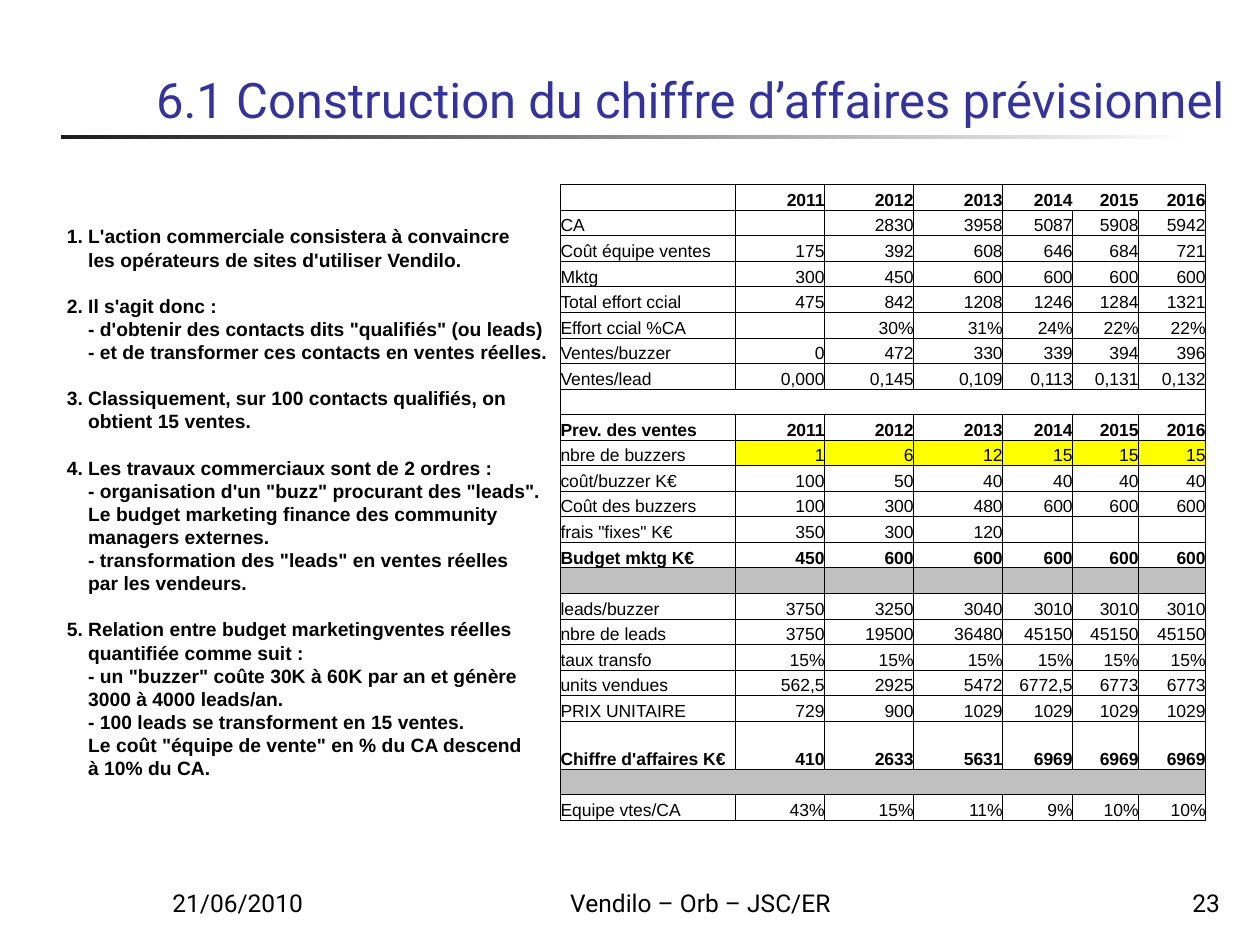
"""Build the sales forecast slide: numbered reasoning beside the revenue table."""
from lxml.etree import SubElement
from pptx import Presentation
from pptx.dml.color import RGBColor as Rgb
from pptx.enum.shapes import MSO_SHAPE as Preset
from pptx.enum.text import MSO_ANCHOR as Anchor, MSO_AUTO_SIZE as AutoSize, PP_ALIGN as Align
from pptx.oxml.ns import qn
from pptx.util import Pt

TITLE = "6.1 Construction du chiffre d’affaires prévisionnel"
POINTS = [
    ("L'action commerciale consistera à convaincre\vles opérateurs de sites d'utiliser Vendilo.",),
    ("Il s'agit donc :",
     "- d'obtenir des contacts dits \"qualifiés\" (ou leads)",
     "- et de transformer ces contacts en ventes réelles."),
    ("Classiquement, sur 100 contacts qualifiés, on\vobtient 15 ventes.",),
    ("Les travaux commerciaux sont de 2 ordres :",
     "- organisation d'un \"buzz\" procurant des \"leads\".\v"
     "Le budget marketing finance des community\vmanagers externes.",
     "- transformation des \"leads\" en ventes réelles\vpar les vendeurs."),
    ("Relation entre budget marketingventes réelles\vquantifiée comme suit :",
     "- un \"buzzer\" coûte 30K à 60K par an et génère\v3000 à 4000 leads/an.",
     "- 100 leads se transforment en 15 ventes.\v"
     "Le coût \"équipe de vente\" en % du CA descend\và 10% du CA."),
]
YEARS = ("2011", "2012", "2013", "2014", "2015", "2016")
BLANK = ("",) * 7
ROWS = [
    ("", *YEARS),
    ("CA", "", "2830", "3958", "5087", "5908", "5942"),
    ("Coût équipe ventes", "175", "392", "608", "646", "684", "721"),
    ("Mktg", "300", "450", "600", "600", "600", "600"),
    ("Total effort ccial", "475", "842", "1208", "1246", "1284", "1321"),
    ("Effort ccial %CA", "", "30%", "31%", "24%", "22%", "22%"),
    ("Ventes/buzzer", "0", "472", "330", "339", "394", "396"),
    ("Ventes/lead", "0,000", "0,145", "0,109", "0,113", "0,131", "0,132"),
    BLANK,
    ("Prev. des ventes", *YEARS),
    ("nbre de buzzers", "1", "6", "12", "15", "15", "15"),
    ("coût/buzzer K€", "100", "50", "40", "40", "40", "40"),
    ("Coût des buzzers", "100", "300", "480", "600", "600", "600"),
    ("frais \"fixes\" K€", "350", "300", "120", "", "", ""),
    ("Budget mktg K€", "450", "600", "600", "600", "600", "600"),
    BLANK,
    ("leads/buzzer", "3750", "3250", "3040", "3010", "3010", "3010"),
    ("nbre de leads", "3750", "19500", "36480", "45150", "45150", "45150"),
    ("taux transfo", "15%", "15%", "15%", "15%", "15%", "15%"),
    ("units vendues", "562,5", "2925", "5472", "6772,5", "6773", "6773"),
    ("PRIX UNITAIRE", "729", "900", "1029", "1029", "1029", "1029"),
    ("Chiffre d'affaires K€", "410", "2633", "5631", "6969", "6969", "6969"),
    BLANK,
    ("Equipe vtes/CA", "43%", "15%", "11%", "9%", "10%", "10%"),
]
BOLD_ROWS = {0, 9, 14, 21}
GRAY_ROWS = {15, 22}
INPUT_ROW, REVENUE_ROW = 10, 21
OPEN_FROM_COLUMN = {0: 5, 8: 1, 22: 1}
COLUMN_WIDTHS = (100, 50.9, 50.9, 50.9, 40, 37.7, 38.3)
ROW_HEIGHT, REVENUE_HEIGHT = 14.6, 27.4
FOOTERS = [
    ("21/06/2010", 91.4, 149.8, Align.LEFT),
    ("Vendilo – Orb – JSC/ER", 286.2, 228.2, Align.CENTER),
    ("23", 554.4, 149.8, Align.RIGHT),
]
THEME = {
    "title": {"size": Pt(28), "name": "Roboto", "color": "333399"},
    "footer": {"size": Pt(14), "name": "Roboto", "color": "000000"},
    "points": {"size": Pt(11), "name": "Arial", "color": "000000", "bold": True},
    "cell": {"size": Pt(10), "name": "Arial", "color": "000000", "bold": False},
    "border": "000000", "input": "FFFF00", "spacer": "C0C0C0",
    "rule": ("1C1C1C", "FFFFFF"),
}
LINE_PITCH, HANGING = 13.2, 12.2


def set_values(target, **values):
    for name, value in values.items():
        setattr(target, name, value)


def style_runs(paragraph, style, **changes):
    for run in paragraph.runs:
        for name, value in {**style, **changes}.items():
            if name == "color":
                run.font.color.rgb = Rgb.from_string(value)
            else:
                setattr(run.font, name, value)


def place(shape, left, top, width, height):
    set_values(shape, left=Pt(left), top=Pt(top), width=Pt(width), height=Pt(height))


def add_title(slide):
    title = slide.shapes.title
    place(title, 82, 26.6, 638, 50.4)
    set_values(title.text_frame, text=TITLE, vertical_anchor=Anchor.BOTTOM,
               word_wrap=True, auto_size=AutoSize.NONE)
    paragraph = title.text_frame.paragraphs[0]
    paragraph.alignment = Align.LEFT
    style_runs(paragraph, THEME["title"])


def add_rule(slide):
    rule = slide.shapes.add_shape(Preset.RECTANGLE, Pt(34.6), Pt(77), Pt(648), Pt(2.2))
    rule.shadow.inherit = False
    rule.line.fill.background()
    rule.fill.gradient()
    rule.fill.gradient_angle = 0
    for stop, color in zip(rule.fill.gradient_stops, THEME["rule"]):
        stop.color.rgb = Rgb.from_string(color)


def add_points(slide):
    body = slide.placeholders[1]
    place(body, 31, 124.8, 289.4, 349)
    frame = body.text_frame
    set_values(frame, word_wrap=True, auto_size=AutoSize.NONE, vertical_anchor=Anchor.TOP,
               margin_right=0)
    lines = [(number, position, text) for number, group in enumerate(POINTS, 1)
             for position, text in enumerate(group)]
    for index, (number, position, text) in enumerate(lines):
        paragraph = frame.add_paragraph() if index else frame.paragraphs[0]
        is_head = position == 0
        set_values(paragraph, text=text, alignment=Align.LEFT, line_spacing=Pt(LINE_PITCH),
                   space_before=Pt(LINE_PITCH if is_head and index else 0), space_after=Pt(0))
        properties = paragraph._p.get_or_add_pPr()
        properties.set("marL", str(Pt(HANGING)))
        properties.set("indent", str(-Pt(HANGING) if is_head else 0))
        if is_head:
            SubElement(properties, qn("a:buAutoNum"), type="arabicPeriod", startAt=str(number))
        else:
            SubElement(properties, qn("a:buNone"))
        style_runs(paragraph, THEME["points"])


def set_borders(cell, row, column):
    open_from = OPEN_FROM_COLUMN.get(row, len(COLUMN_WIDTHS))
    last = len(COLUMN_WIDTHS) - 1
    edges = {"lnL": column < open_from, "lnR": column == last or column + 1 < open_from,
             "lnT": True, "lnB": True}
    properties = cell._tc.get_or_add_tcPr()
    for edge, visible in edges.items():
        line = SubElement(properties, qn(f"a:{edge}"), w=str(Pt(0.5)))
        if visible:
            fill = SubElement(line, qn("a:solidFill"))
            SubElement(fill, qn("a:srgbClr"), val=THEME["border"])
        else:
            SubElement(line, qn("a:noFill"))


def fill_cell(cell, row, column, text):
    set_values(cell, text=text, vertical_anchor=Anchor.BOTTOM, margin_left=0, margin_right=0,
               margin_top=0, margin_bottom=0)
    paragraph = cell.text_frame.paragraphs[0]
    paragraph.alignment = Align.RIGHT if column else Align.LEFT
    style_runs(paragraph, THEME["cell"], bold=row in BOLD_ROWS)
    if not text:
        SubElement(paragraph._p, qn("a:endParaRPr"), sz=str(int(THEME["cell"]["size"].pt * 100)))
    set_borders(cell, row, column)
    color = THEME["spacer"] if row in GRAY_ROWS else None
    if row == INPUT_ROW and column:
        color = THEME["input"]
    if color:
        cell.fill.solid()
        cell.fill.fore_color.rgb = Rgb.from_string(color)
    else:
        cell.fill.background()


def add_forecast(slide):
    heights = [REVENUE_HEIGHT if row == REVENUE_ROW else ROW_HEIGHT for row in range(len(ROWS))]
    table = slide.shapes.add_table(len(ROWS), len(COLUMN_WIDTHS), Pt(320.3), Pt(105.5),
                                   Pt(sum(COLUMN_WIDTHS)), Pt(sum(heights))).table
    set_values(table, first_row=False, horz_banding=False)
    for column, width in zip(table.columns, COLUMN_WIDTHS):
        column.width = Pt(width)
    for row, (values, height) in enumerate(zip(ROWS, heights)):
        table.rows[row].height = Pt(height)
        for column, text in enumerate(values):
            fill_cell(table.cell(row, column), row, column, text)


def add_footers(slide):
    for text, left, width, alignment in FOOTERS:
        frame = slide.shapes.add_textbox(Pt(left), Pt(491.8), Pt(width), Pt(36)).text_frame
        set_values(frame, text=text, word_wrap=True, vertical_anchor=Anchor.BOTTOM)
        paragraph = frame.paragraphs[0]
        paragraph.alignment = alignment
        style_runs(paragraph, THEME["footer"])


def main():
    presentation = Presentation()
    set_values(presentation, slide_width=Pt(720), slide_height=Pt(540))
    slide = presentation.slides.add_slide(presentation.slide_layouts[1])
    for build in (add_rule, add_footers, add_title, add_points, add_forecast):
        build(slide)
    presentation.save("out.pptx")


if __name__ == "__main__":
    main()
